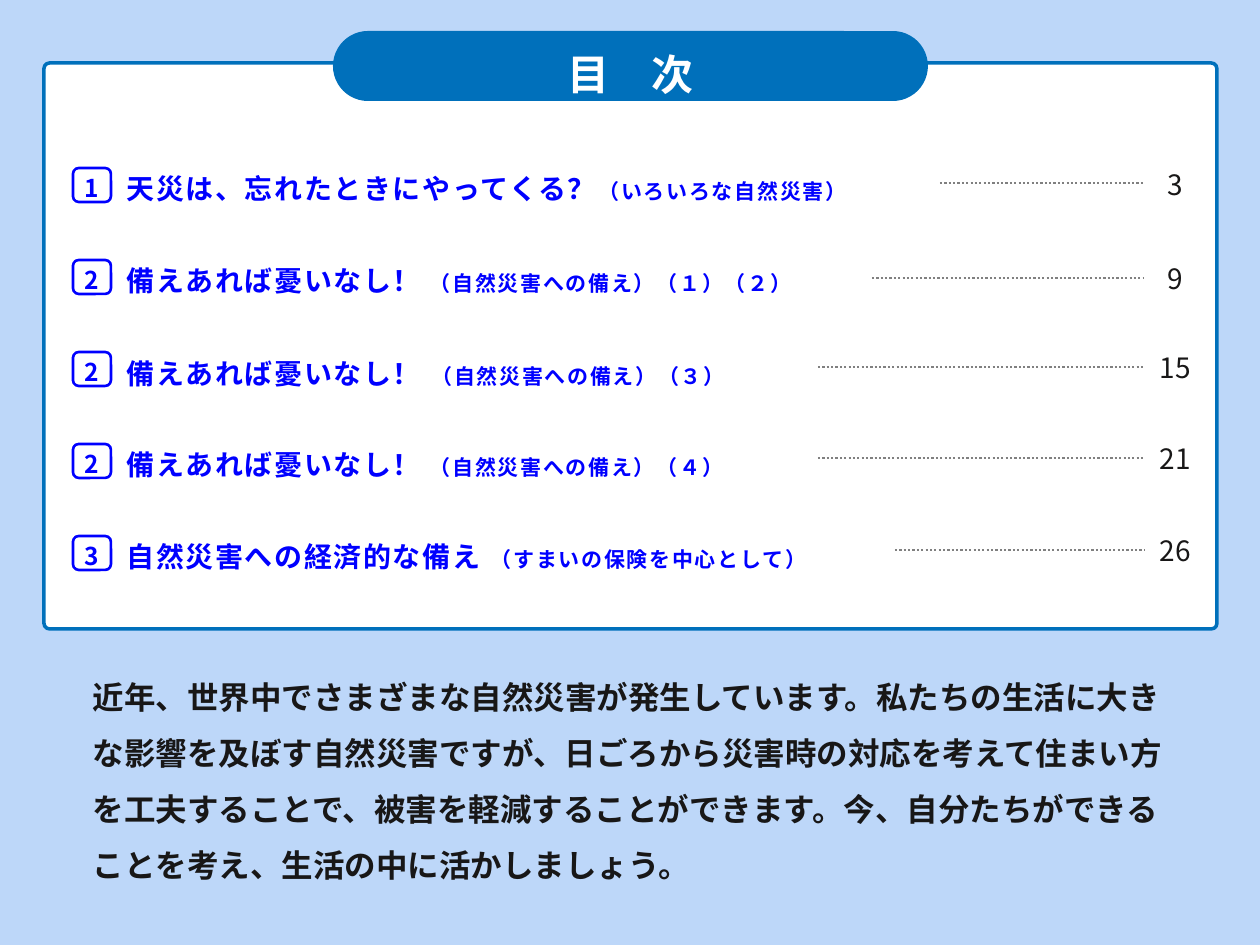
from lxml import etree
from pptx import Presentation
from pptx.dml.color import RGBColor
from pptx.enum.dml import MSO_LINE
from pptx.enum.shapes import MSO_CONNECTOR, MSO_SHAPE
from pptx.enum.text import MSO_ANCHOR, MSO_AUTO_SIZE, PP_ALIGN
from pptx.oxml.ns import qn
from pptx.util import Emu, Pt

FONT = "Noto Sans CJK JP"
SKY, BLUE, LINK, INK, GREY, WHITE = "BDD7F9", "0070BB", "0000FF", "181717", "808080", "FFFFFF"
LEFT, CENTER = PP_ALIGN.LEFT, PP_ALIGN.CENTER
TOP, MIDDLE = MSO_ANCHOR.TOP, MSO_ANCHOR.MIDDLE
ROUNDED, STRAIGHT = MSO_SHAPE.ROUNDED_RECTANGLE, MSO_CONNECTOR.STRAIGHT
DOTTED, FIT_SHAPE = MSO_LINE.ROUND_DOT, MSO_AUTO_SIZE.SHAPE_TO_FIT_TEXT

PX_PER_INCH = 126
TEXT_INSETS = (13, 6, 13, 6)
ENTRY_TOP, ENTRY_PITCH = 166, 92
LEADER_END = 1144

ENTRIES = [
    ("1", "\u3000天災は、忘れたときにやってくる？".replace("\u3000", "　"), "（いろいろな自然災害）", 902, 940, 161, "3"),
    ("2", "　備えあれば憂いなし！", " （自然災害への備え）（１）（２）", 733, 872, 256, "9"),
    ("2", "　備えあれば憂いなし！ ", "（自然災害への備え）（３）", 733, 818, 345, "15"),
    ("2", "　備えあれば憂いなし！", " （自然災害への備え）（４）", 733, 818, 436, "21"),
    ("3", "　自然災害への経済的な備え ", "（すまいの保険を中心として）", 760, 895, 528, "26"),
]
MESSAGE = (
    "近年、世界中でさまざまな自然災害が発生しています。"
    "私たちの生活に大きな影響を及ぼす自然災害ですが、"
    "日ごろから災害時の対応を考えて住まい方を工夫することで、被害を軽減することができます。"
    "今、自分たちができることを考え、生活の中に活かしましょう。"
)


def px(length):
    """Turn pixels into EMU."""
    return Emu(round(length * 914400 / PX_PER_INCH))


def rgb(hex_code):
    """Turn a hex string into a colour."""
    return RGBColor.from_string(hex_code)


def add_run(paragraph, wording, size, color, bold=False, spacing=0):
    """Append one formatted run to a paragraph."""
    run = paragraph.add_run()
    run.text = wording
    run.font.size, run.font.bold, run.font.name = Pt(size), bold, FONT
    run.font.color.rgb = rgb(color)
    properties = run.font._element
    etree.SubElement(properties, qn("a:ea")).set("typeface", FONT)
    if spacing:
        properties.set("spc", str(spacing * 100))


def set_frame(holder, align=LEFT, anchor=TOP, insets=TEXT_INSETS, leading=None):
    """Lay out a text frame and return its first paragraph."""
    frame = holder.text_frame
    frame.word_wrap = True
    frame.vertical_anchor = anchor
    (frame.margin_left, frame.margin_top,
     frame.margin_right, frame.margin_bottom) = map(px, insets)
    paragraph = frame.paragraphs[0]
    paragraph.alignment = align
    if leading:
        paragraph.line_spacing = Pt(leading)
    return paragraph


def add_text(slide, box, runs, **layout):
    """Add a text box holding the given runs."""
    holder = slide.shapes.add_textbox(*map(px, box))
    paragraph = set_frame(holder, **layout)
    holder.text_frame.auto_size = FIT_SHAPE
    for run in runs:
        add_run(paragraph, *run)


def add_panel(slide, box, fill, line=None, width=0, corner=0.17):
    """Add a rounded rectangle without shadow."""
    panel = slide.shapes.add_shape(ROUNDED, *map(px, box))
    panel.adjustments[0] = corner
    panel.shadow.inherit = False
    panel.fill.solid()
    panel.fill.fore_color.rgb = rgb(fill)
    if line:
        panel.line.color.rgb = rgb(line)
        panel.line.width = Pt(width)
    else:
        panel.line.fill.background()
    return panel


def add_leader(slide, start, y):
    """Add a dotted leader that runs up to the page number."""
    leader = slide.shapes.add_connector(STRAIGHT, px(start), px(y), px(LEADER_END), px(y))
    leader.line.color.rgb = rgb(GREY)
    leader.line.width = Pt(1.25)
    leader.line.dash_style = DOTTED
    etree.SubElement(leader.element.spPr, qn("a:effectLst"))


def add_heading(slide):
    """Place the title placeholder on its pill."""
    add_panel(slide, (333, 31, 595, 70), BLUE, corner=0.5)
    title = slide.shapes.title
    title.left, title.top, title.width, title.height = map(px, (333, 42, 595, 63))
    paragraph = set_frame(title, align=CENTER)
    title.text_frame.auto_size = FIT_SHAPE
    add_run(paragraph, "目　次", 24, WHITE, True)
    slide.shapes.element.append(title.element)


def add_entry(slide, index, entry):
    """Add one line of the table of contents."""
    number, heading, detail, width, leader_start, page_top, page = entry
    top = ENTRY_TOP + ENTRY_PITCH * index
    runs = [(heading, 16, LINK, True, 1), (detail, 12, LINK, True, 1)]
    add_text(slide, (84, top, width, 47), runs)
    add_text(slide, (LEADER_END, page_top, 63, 47), [(page, 16, INK)], align=CENTER)
    add_leader(slide, leader_start, page_top + 22)
    badge = add_panel(slide, (73, top + 2, 38, 34), WHITE, LINK, 1.5)
    label = set_frame(badge, align=CENTER, anchor=MIDDLE, insets=(0, 10, 0, 0), leading=14)
    add_run(label, number, 14, LINK, True)


def main():
    """Build the contents slide."""
    deck = Presentation()
    deck.slide_width, deck.slide_height = px(1260), px(945)
    slide = deck.slides.add_slide(deck.slide_layouts[5])
    slide.background.fill.solid()
    slide.background.fill.fore_color.rgb = rgb(SKY)
    add_panel(slide, (44, 63, 1173, 566), WHITE, BLUE, 2, corner=0.01)
    add_heading(slide)
    add_text(slide, (44, 635, 1173, 272), [(MESSAGE, 18, INK, True)],
             insets=(49, 25, 49, 25), leading=32)
    for index, entry in enumerate(ENTRIES):
        add_entry(slide, index, entry)
    deck.save("out.pptx")


if __name__ == "__main__":
    main()
